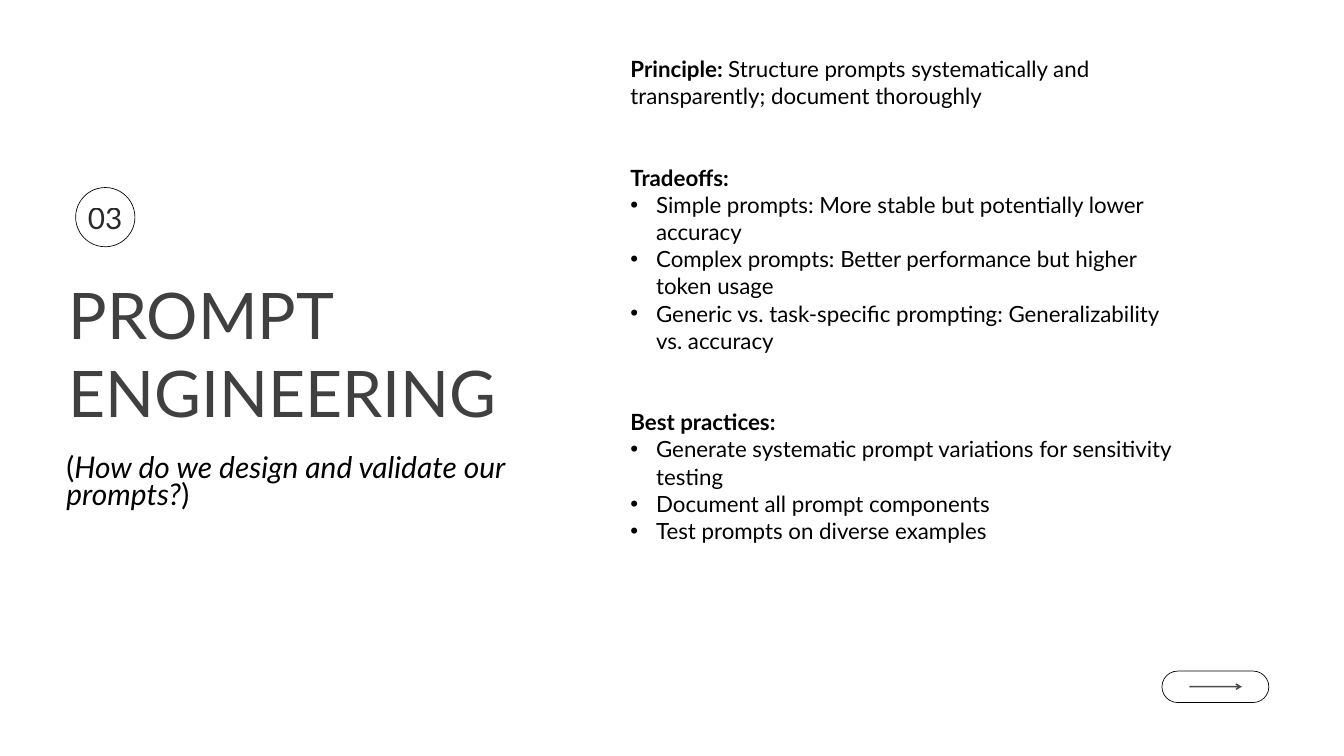
from dataclasses import dataclass

from lxml.etree import SubElement
from pptx import Presentation
from pptx.dml.color import RGBColor
from pptx.enum.shapes import MSO_CONNECTOR as Conn, MSO_SHAPE as Shape
from pptx.enum.text import MSO_ANCHOR as Anchor, MSO_AUTO_SIZE as AutoSize, PP_ALIGN as Align
from pptx.oxml.ns import qn
from pptx.util import Cm, Pt

COLORS = {"ink": "000000", "title": "404040", "paper": "FFFFFF"}
FONT = "Lato"
BODY_SIZE, BODY_LEADING = 23.9, 29.1
SECTION_GAP = 2 * BODY_LEADING
BULLET_INDENT = 0.97


@dataclass(frozen=True)
class Box:
    left: float
    top: float
    width: float
    height: float

    def lengths(self) -> list:
        return [Cm(v) for v in (self.left, self.top, self.width, self.height)]


@dataclass(frozen=True)
class Section:
    heading: str
    text: str = ""
    bullets: tuple[str, ...] = ()


SECTIONS = (
    Section("Principle: ", "Structure prompts systematically and transparently; document thoroughly"),
    Section("Tradeoffs:", bullets=(
        "Simple prompts: More stable but potentially lower accuracy",
        "Complex prompts: Better performance but higher token usage",
        "Generic vs. task-specific prompting: Generalizability vs. accuracy",
    )),
    Section("Best practices:", bullets=(
        "Generate systematic prompt variations for sensitivity testing",
        "Document all prompt components",
        "Test prompts on diverse examples",
    )),
)


def set_alpha(color_parent, percent: int) -> None:
    clr = next(color_parent.iter(qn("a:srgbClr")))
    SubElement(clr, qn("a:alpha"), val=str(percent * 1000))


def add_run(p, text: str, *, size: float = BODY_SIZE, color: str = "ink",
            bold: bool = False, italic: bool = False, alpha: int = 100) -> None:
    r = p.add_run()
    r.text = text
    font = r.font
    font.name, font.size, font.bold, font.italic = FONT, Pt(size), bold, italic
    font.color.rgb = RGBColor.from_string(COLORS[color])
    if alpha < 100:
        set_alpha(r._r, alpha)


def format_paragraph(p, leading: float, *, before: float = 0, align=Align.LEFT,
                     bullet: bool = False) -> None:
    if bullet:
        pPr = p._p.get_or_add_pPr()
        pPr.set("marL", str(Cm(BULLET_INDENT)))
        pPr.set("indent", str(-Cm(BULLET_INDENT)))
        SubElement(pPr, qn("a:buFont"), typeface="Arial")
        SubElement(pPr, qn("a:buChar"), char="•")
    p.line_spacing, p.space_before, p.alignment = Pt(leading), Pt(before), align


def prepare_frame(tf):
    """Clear insets, wrap from the top and return the text frame."""
    tf.margin_left = tf.margin_right = tf.margin_top = tf.margin_bottom = 0
    tf.word_wrap = True
    tf.auto_size = AutoSize.NONE
    tf.vertical_anchor = Anchor.TOP
    return tf


def add_text_frame(s, box: Box):
    return prepare_frame(s.shapes.add_textbox(*box.lengths()).text_frame)


def add_outline(s, kind, box: Box):
    sp = s.shapes.add_shape(kind, *box.lengths())
    sp.shadow.inherit = False
    sp.fill.background()
    sp.line.color.rgb = RGBColor.from_string(COLORS["ink"])
    sp.line.width = Pt(0.75)
    return sp


def add_arrow(s, left: float, right: float, y: float) -> None:
    arrow = s.shapes.add_connector(Conn.STRAIGHT, Cm(left), Cm(y), Cm(right), Cm(y))
    arrow.line.color.rgb = RGBColor.from_string(COLORS["ink"])
    arrow.line.width = Pt(1.5)
    ln = arrow.line._get_or_add_ln()
    set_alpha(ln, 71)
    SubElement(ln, qn("a:tailEnd"), type="arrow")
    SubElement(arrow._element.spPr, qn("a:effectLst"))


def add_title(s) -> None:
    title = s.shapes.title
    title.left, title.top, title.width, title.height = Box(2.59, 10.34, 17.93, 5.97).lengths()
    p = prepare_frame(title.text_frame).paragraphs[0]
    format_paragraph(p, 84)
    add_run(p, "PROMPT ENGINEERING", size=68.8, color="title")


def add_question(s) -> None:
    p = add_text_frame(s, Box(2.51, 17.3, 16.92, 2.13)).paragraphs[0]
    format_paragraph(p, BODY_LEADING)
    add_run(p, "(", size=32)
    add_run(p, "How do we design and validate our prompts?", size=32, italic=True)
    add_run(p, ")", size=32)


def add_number_badge(s) -> None:
    add_outline(s, Shape.OVAL, Box(2.86, 7.09, 2.24, 2.24))
    p = add_text_frame(s, Box(3.05, 7.34, 1.85, 1.52)).paragraphs[0]
    format_paragraph(p, 44.6, align=Align.CENTER)
    add_run(p, "03", size=31.9, alpha=83)


def add_next_button(s) -> None:
    pill = add_outline(s, Shape.ROUNDED_RECTANGLE, Box(43.92, 25.37, 4.04, 1.19))
    pill.adjustments[0] = 0.5
    add_arrow(s, 44.96, 46.94, 25.96)


def add_sections(s) -> None:
    tf = add_text_frame(s, Box(23.83, 2.08, 21.13, 18.59))
    for i, section in enumerate(SECTIONS):
        p = tf.add_paragraph() if i else tf.paragraphs[0]
        format_paragraph(p, BODY_LEADING, before=SECTION_GAP if i else 0)
        add_run(p, section.heading, bold=True)
        if section.text:
            add_run(p, section.text)
        for text in section.bullets:
            p = tf.add_paragraph()
            format_paragraph(p, BODY_LEADING, bullet=True)
            add_run(p, text)


def main() -> None:
    prs = Presentation()
    prs.slide_width, prs.slide_height = Cm(50.8), Cm(28.58)
    s = prs.slides.add_slide(prs.slide_layouts[5])
    s.background.fill.solid()
    s.background.fill.fore_color.rgb = RGBColor.from_string(COLORS["paper"])
    add_title(s)
    add_question(s)
    add_number_badge(s)
    add_next_button(s)
    add_sections(s)
    prs.save("out.pptx")


if __name__ == "__main__":
    main()
